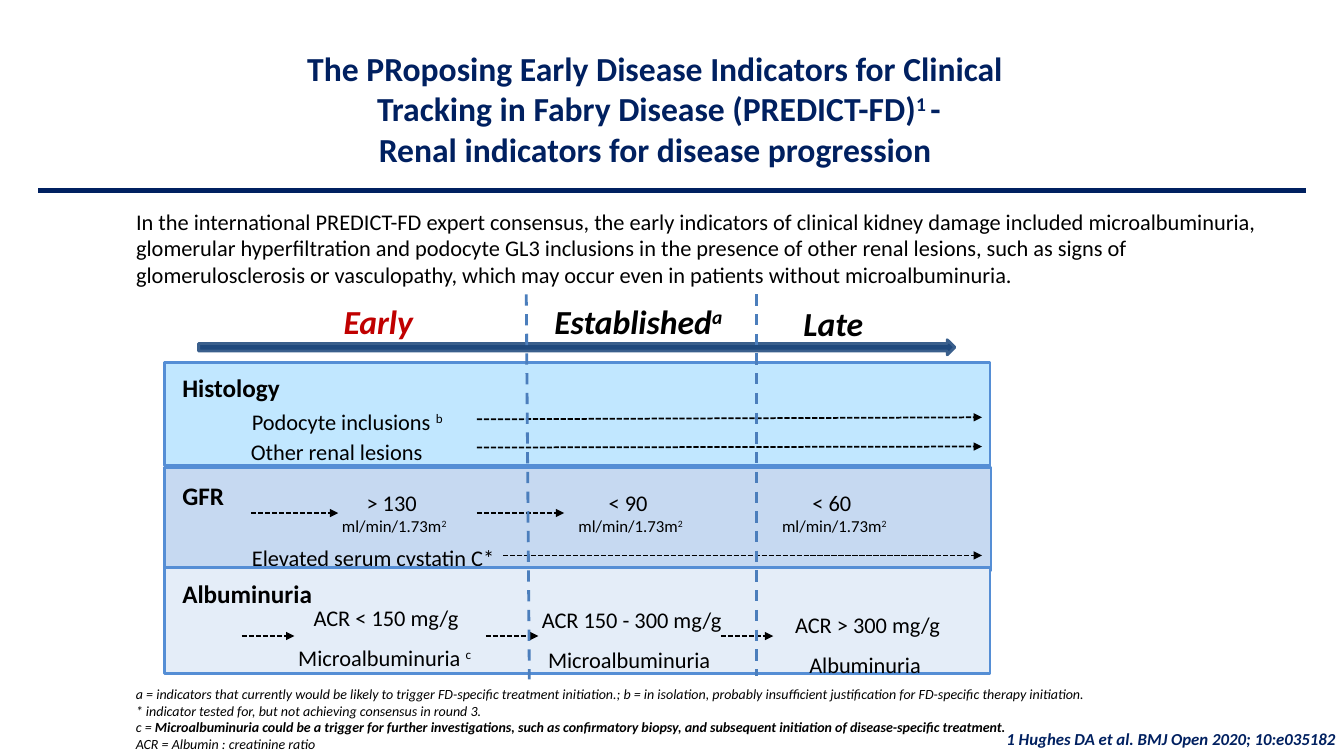
from dataclasses import dataclass

from lxml.etree import SubElement
from pptx import Presentation
from pptx.dml.color import RGBColor
from pptx.enum.dml import MSO_LINE_DASH_STYLE as Dash
from pptx.enum.shapes import MSO_CONNECTOR_TYPE as Link, MSO_SHAPE as Preset
from pptx.enum.text import MSO_ANCHOR as Anchor, MSO_AUTO_SIZE as Fit, PP_ALIGN as Align
from pptx.oxml.ns import qn
from pptx.util import Inches, Pt


@dataclass(frozen=True)
class Theme:
    font: str = "Calibri"
    navy: str = "002060"
    black: str = "000000"
    red: str = "C00000"
    arrow_fill: str = "1F497D"
    arrow_edge: str = "3A5F8C"
    divider: str = "4B7EBC"
    band_edge: str = "558ED5"
    histology: str = "C1E7FF"
    gfr: str = "C6D9F1"
    albuminuria: str = "E4EDF8"
    heading: int = 24
    label: int = 18
    body: int = 16
    small: int = 12
    note: int = 10


THEME = Theme()


def write(para, text, size=THEME.body, color=THEME.black, bold=False, italic=False, raised=False):
    span = para.add_run()
    span.text = text
    font = span.font
    font.name, font.size, font.bold, font.italic = THEME.font, Pt(size), bold, italic
    font.color.rgb = RGBColor.from_string(color)
    if raised:
        font._element.set("baseline", "30000")


class Page:
    """Draws on one slide with a grid of 0.1 inch columns and rows."""

    CELL = Inches(0.1)

    def __init__(self, deck, layout):
        self.slide = deck.slides.add_slide(deck.slide_layouts[layout])
        self.shapes = self.slide.shapes

    def grid(self, *places):
        return [round(place * self.CELL) for place in places]

    def fill(self, box, lines, align=Align.LEFT, anchor=Anchor.TOP, gap=0, spacing=1.0, **style):
        frame = box.text_frame
        frame.word_wrap, frame.auto_size, frame.vertical_anchor = True, Fit.NONE, anchor
        for index, line in enumerate(lines):
            para = frame.add_paragraph() if index else frame.paragraphs[0]
            if box.is_placeholder:
                properties = para._p.get_or_add_pPr()
                properties.set("marL", "0")
                properties.set("indent", "0")
                SubElement(properties, qn("a:buNone"))
            para.alignment, para.line_spacing = align, spacing
            para.space_before = Pt(gap if index else 0)
            for text, extra in [(line, {})] if isinstance(line, str) else line:
                write(para, text, **{**style, **extra})
        return frame

    def text(self, place, *lines, **style):
        return self.fill(self.shapes.add_textbox(*self.grid(*place)), lines, **style)

    def placeholder(self, index, place, *lines, **style):
        box = self.slide.placeholders[index]
        box.left, box.top, box.width, box.height = self.grid(*place)
        return self.fill(box, lines, **style)

    def shape(self, preset, place, color, edge):
        shape = self.shapes.add_shape(preset, *self.grid(*place))
        shape.shadow.inherit = False
        shape.fill.solid()
        shape.fill.fore_color.rgb = RGBColor.from_string(color)
        shape.line.color.rgb = RGBColor.from_string(edge)
        shape.line.width = Pt(2)

    def line(self, start, end, color, width, dash=None, head=False):
        link = self.shapes.add_connector(Link.STRAIGHT, *self.grid(*start, *end))
        SubElement(link._element.spPr, qn("a:effectLst"))
        link.line.color.rgb = RGBColor.from_string(color)
        link.line.width = Pt(width)
        if dash:
            link.line.dash_style = dash
        if head:
            SubElement(link.line._get_or_add_ln(), qn("a:tailEnd"), type="triangle")

    def arrow(self, left, right, row, rise=0):
        self.line((left, row), (right, row - rise), THEME.black, 1.25, Dash.SQUARE_DOT, True)

    def band(self, name, place, color, label_row):
        self.shape(Preset.RECTANGLE, place, color, THEME.band_edge)
        self.text((17.1, label_row, 31.7, 3.6), name, size=THEME.label, bold=True)


def raised(text, mark, **style):
    return [(text, style), (mark, {**style, "raised": True})]


def draw_header(page):
    page.line((3.8, 18.9), (129.5, 18.9), THEME.navy, 3.5)
    page.placeholder(
        0, (12.4, 4.2, 105.9, 13.1),
        "The PRoposing Early Disease Indicators for Clinical ",
        raised("Tracking in Fabry Disease (PREDICT-FD)", "1 ") + [("-", {})],
        "Renal indicators for disease progression ",
        align=Align.CENTER, anchor=Anchor.MIDDLE, size=THEME.heading, color=THEME.navy, bold=True)
    page.placeholder(
        1, (12.5, 20.1, 114.2, 9.1),
        "In the international PREDICT-FD expert consensus, the early indicators of clinical kidney "
        "damage included microalbuminuria, glomerular hyperfiltration and podocyte GL3 inclusions in "
        "the presence of other renal lesions, such as signs of glomerulosclerosis or vasculopathy, "
        "which may occur even in patients without microalbuminuria.")


def draw_stages(page):
    page.shape(Preset.RIGHT_ARROW, (19.7, 33.7, 75, 1.5), THEME.arrow_fill, THEME.arrow_edge)
    stages = [((33.1, 29.4, 11.5, 5), "Early", THEME.red),
              ((54, 29.4, 19.3, 5), raised("Established", "a"), THEME.black),
              ((78.7, 29.6, 13.5, 4.4), "Late", THEME.black)]
    for place, name, color in stages:
        page.text(place, name, size=THEME.heading, color=color, bold=True, italic=True)


def draw_histology(page):
    page.band("Histology", (16.3, 36, 81.9, 10.2), THEME.histology, 36.4)
    page.text((24, 40, 26.7, 3.5), raised("Podocyte inclusions ", "b"))
    page.text((23.9, 43, 26.7, 3.3), "Other renal lesions")
    page.arrow(47.3, 97.4, 41.6, rise=0.2)
    page.arrow(47.3, 97.4, 44.4, rise=0.1)


def draw_gfr(page):
    page.band("GFR", (16.3, 46.4, 82, 10.2), THEME.gfr, 47.2)
    for left, width, limit in [(28.3, 21.6, "> 130 "), (55.7, 13.7, "< 90 "), (75.9, 13.7, "< 60 ")]:
        page.text((left, 48, width, 5.1), limit, raised("ml/min/1.73m", "2", size=THEME.small),
                  align=Align.CENTER)
    for left in (24.9, 47.3):
        page.arrow(left, left + 8.65, 50.9)
    page.text((24, 53.5, 31.8, 3.3), "Elevated serum cystatin C*")
    page.arrow(49.9, 97.4, 55.1)


def draw_albuminuria(page):
    page.band("Albuminuria", (16.3, 56.3, 81.9, 10.5), THEME.albuminuria, 56.9)
    levels = [((27.5, 59.4, 21.6, 7.3), "ACR < 150 mg/g", raised("Microalbuminuria ", "c ")),
              ((51.7, 59.6, 21.9, 7.7), "ACR 150 - 300 mg/g", "Microalbuminuria "),
              ((75, 60.1, 22.1, 7.2), "ACR > 300 mg/g", "Albuminuria ")]
    for place, ratio, name in levels:
        page.text(place, ratio, name, align=Align.CENTER, gap=9.75)
    for left in (24, 48.2, 71.5):
        page.arrow(left, left + 5.2, 63.1)


def draw_dividers(page):
    for top, bottom in [((52.2, 29.2), (52.5, 67.4)), ((75, 29.2), (75, 67.1))]:
        page.line(top, bottom, THEME.divider, 2, Dash.DASH)


def draw_notes(page):
    page.text(
        (12.5, 67.5, 101.7, 7.7),
        "a = indicators that currently would be likely to trigger FD-specific treatment initiation.; "
        "b = in isolation, probably insufficient justification for FD-specific therapy initiation.",
        "* indicator tested for, but not achieving consensus in round 3.",
        [("c = ", {}),
         ("Microalbuminuria could be a trigger for further investigations, such as confirmatory "
          "biopsy, and subsequent initiation of disease-specific treatment.", {"bold": True})],
        "ACR = Albumin : creatinine ratio",
        size=THEME.note, italic=True)
    frame = page.text(
        (84.6, 72.5, 47.9, 2.3), "1 Hughes DA et al. BMJ Open 2020; 10:e035182",
        align=Align.RIGHT, spacing=0.93, size=THEME.small, color=THEME.navy, bold=True, italic=True)
    frame.margin_left = frame.margin_right = frame.margin_top = frame.margin_bottom = 0


def main():
    deck = Presentation()
    deck.slide_width, deck.slide_height = Inches(13.33), Inches(7.5)
    page = Page(deck, 1)
    for draw in (draw_header, draw_stages, draw_histology, draw_gfr, draw_albuminuria,
                 draw_dividers, draw_notes):
        draw(page)
    deck.save("out.pptx")


if __name__ == "__main__":
    main()
